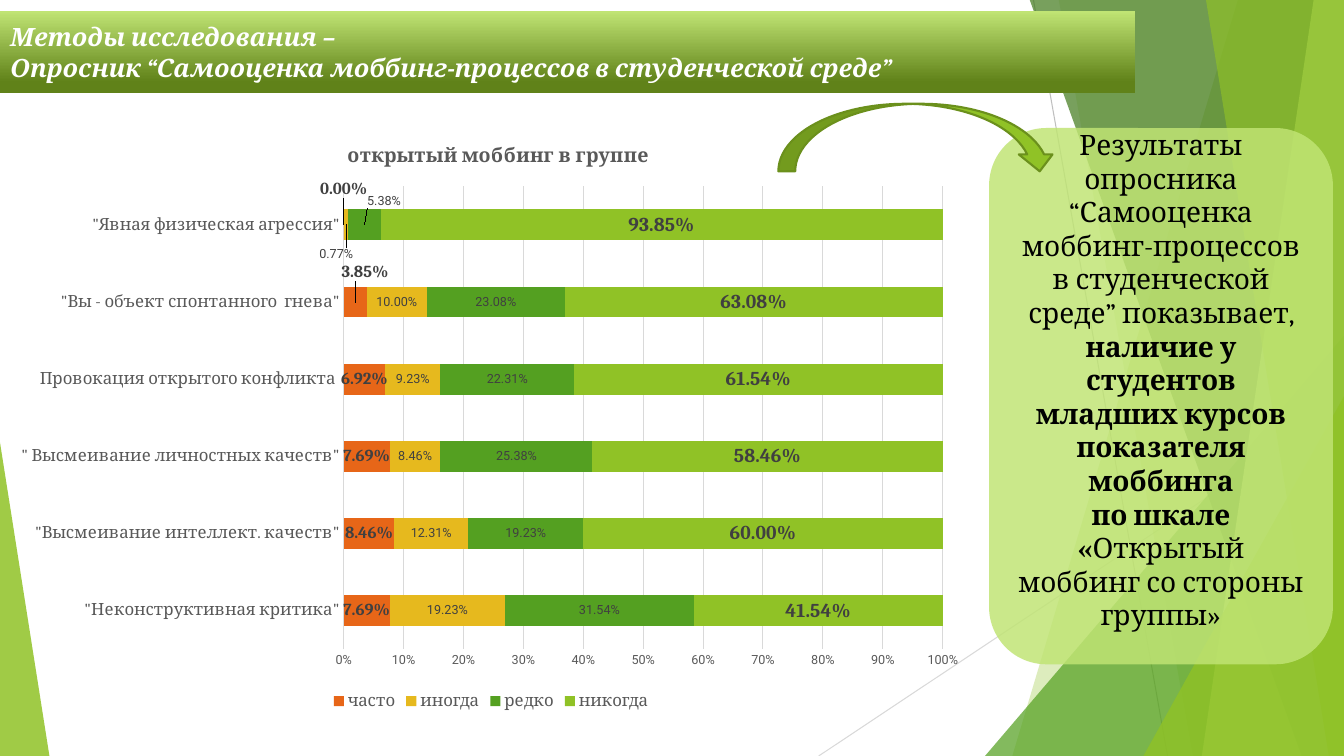
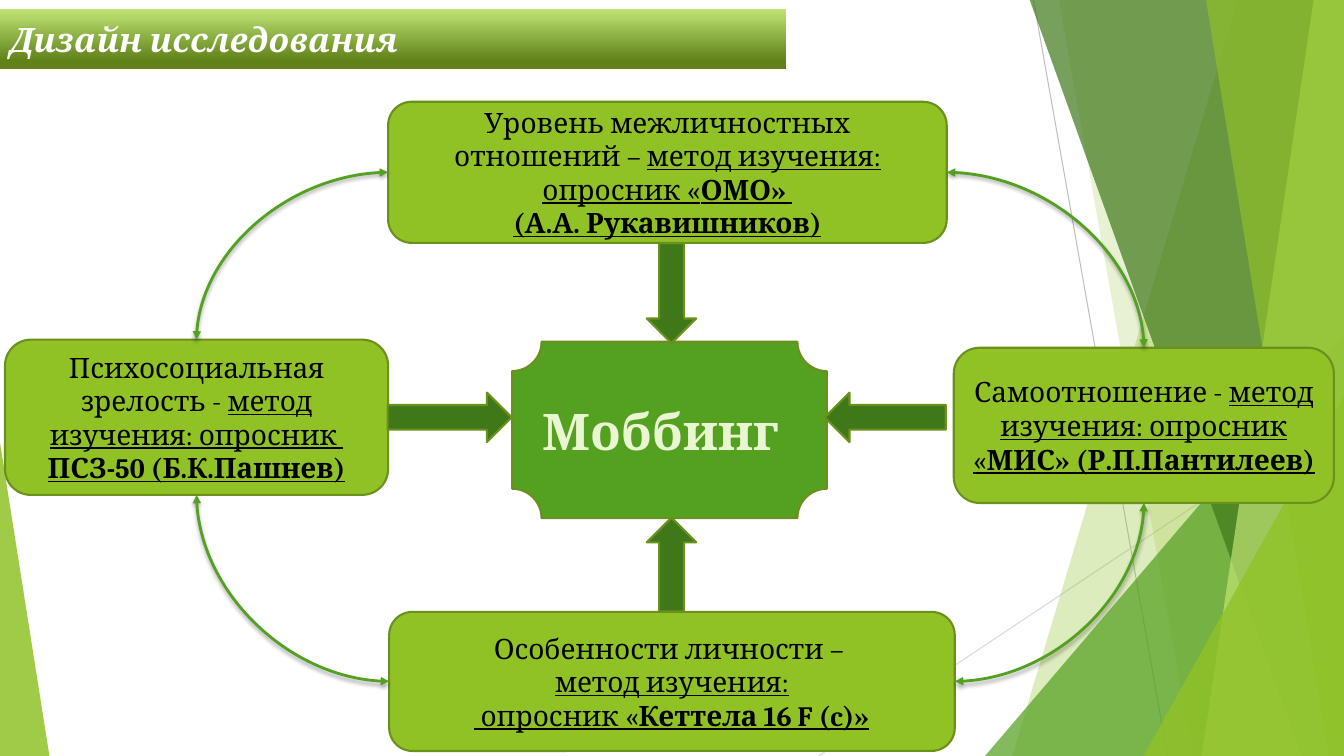
from lxml import etree
from pptx import Presentation
from pptx.chart.data import CategoryChartData
from pptx.dml.color import RGBColor
from pptx.enum.chart import XL_CHART_TYPE, XL_LEGEND_POSITION, XL_TICK_MARK
from pptx.enum.shapes import MSO_CONNECTOR, MSO_SHAPE
from pptx.enum.text import MSO_ANCHOR, MSO_AUTO_SIZE, PP_ALIGN
from pptx.oxml import parse_xml
from pptx.oxml.ns import nsdecls, qn
from pptx.util import Inches, Pt

HEX = {
    "lime": "90C226", "green": "54A021", "forest": "3F7819", "pale": "C0E474",
    "olive": "608219", "edge": "6B901C", "mint": "EAF6D1", "white": "FFFFFF",
    "black": "000000", "text": "595959", "label": "404040", "grid": "D9D9D9",
    "ray": "BFBFBF", "orange": "E76618", "gold": "E6B91E",
}
SERIF, SANS = "Cambria", "Roboto"

# Shared backdrop: rays, then facets (points or a triangle box) with opacity
RAYS = [((10.25, 0), (11.58, 7.5), "ray"), ((13.33, 4.03), (8.12, 7.5), "grid")]
FACETS = [
    ("poly", (12.28, 13.33, 13.33, 10.04), "lime", 30),
    ("poly", (10.5, 13.33, 13.33, 11.83), "lime", 20),
    ("tri", (9.77, 3.33, 3.56, 4.17, 1), "green", 72),
    ("poly", (10.21, 13.33, 13.33, 12.91), "forest", 70),
    ("poly", (13.03, 13.33, 13.33, 11.92), "pale", 70),
    ("poly", (11.96, 13.33, 13.33, 13.18), "lime", 65),
    ("tri", (11.34, 3.93, 1.99, 3.57, 1), "lime", 80),
    ("tri", (0, 4.39, 0.49, 3.11, 0), "lime", 85),
]

# Slide 1: survey results
SURVEY = "Методы исследования – \nОпросник “Самооценка моббинг-процессов в студенческой среде”"
CATS = [
    '"Неконструктивная критика"', '"Высмеивание интеллект. качеств"',
    '" Высмеивание личностных качеств"', "Провокация открытого конфликта ",
    '"Вы - объект спонтанного  гнева"', '"Явная физическая агрессия"',
]
# name, values, colour, label font (size, bold, face), {point: label shift}
SERIES = [
    ("часто", (0.0769, 0.0846, 0.0769, 0.0692, 0.0385, 0), "orange",
     (12, True, SERIF), {4: (0.01, -0.05), 5: (0, -0.06)}),
    ("иногда", (0.1923, 0.1231, 0.0846, 0.0923, 0.1, 0.0077), "gold",
     (9, False, SANS), {5: (-0.01, 0.05)}),
    ("редко", (0.3154, 0.1923, 0.2538, 0.2231, 0.2308, 0.0538), "green",
     (9, False, SANS), {5: (0.02, -0.04)}),
    ("никогда", (0.4154, 0.6, 0.5846, 0.6154, 0.6308, 0.9385), "lime",
     (14, True, SERIF), {}),
]
# Paragraphs of runs: (text, style), b bold, u underlined
RESULT = [
    [("Результаты опросника “Самооценка моббинг-процессов в студенческой среде” показывает, ", ""),
     ("наличие у студентов младших курсов показателя моббинга", "b")],
    [("по шкале «", "b"), ("Открытый моббинг со стороны группы»", "")],
]

# Slide 2: study design
BOXES = {
    "left": ((0.05, 3.37, 3.8, 1.54), [
        [("Психосоциальная зрелость - ", ""), ("метод изучения: опросник \n", "u"),
         ("ПСЗ-50 (Б.К.Пашнев)", "bu")]]),
    "right": ((9.46, 3.45, 3.77, 1.54), [
        [("Самоотношение - ", ""), ("метод изучения: опросник «", "u"),
         ("МИС» (Р.П.Пантилеев)", "bu")]]),
    "top": ((3.85, 1.01, 5.54, 1.4), [
        [("Уровень межличностных отношений – ", ""),
         ("метод изучения: опросник «", "u"), ("ОМО» ", "bu")],
        [("(А.А. Рукавишников)", "bu")]]),
    "bottom": ((3.86, 6.07, 5.61, 1.38), [
        [("Особенности личности – \n", ""), ("метод изучения:\n опросник «", "u"),
         ("Кеттела 16 F (c)»", "bu")]]),
}
# Curves: start box and side, end box and side
CURVES = [("top", 1, "left", 0), ("bottom", 3, "right", 2),
          ("top", 3, "right", 0), ("bottom", 1, "left", 2)]
# Block arrows: centre x, centre y, length, turn
ARROWS = [(6.66, 2.91, 0.99, 0), (4.46, 4.14, 1.23, 270),
          (6.66, 5.6, 0.93, 180), (8.78, 4.14, 1.2, 90)]
WIDE = 0.49


def rgb(name):
    return RGBColor.from_string(HEX[name])


def style(font, size, color, bold=None, face=SERIF):
    font.size, font.name, font.bold = Pt(size), face, bold
    font.color.rgb = rgb(color)


def add_box(slide, kind, at, fill, edge=None, alpha=None):
    box = slide.shapes.add_shape(kind, *map(Inches, at))
    paint(box, fill, edge, alpha)
    return box


def paint(box, fill, edge=None, alpha=None):
    box.shadow.inherit = False
    box.fill.solid()
    box.fill.fore_color.rgb = rgb(fill)
    if alpha:
        tint = box.element.spPr.find(".//" + qn("a:srgbClr"))
        etree.SubElement(tint, qn("a:alpha"), val=str(alpha * 1000))
    if edge:
        box.line.color.rgb = rgb(edge)
        box.line.width = Pt(1.5)
    else:
        box.line.fill.background()


def write(frame, paras, size, color, align, bold=None):
    for i, runs in enumerate(paras):
        para = frame.add_paragraph() if i else frame.paragraphs[0]
        para.alignment = align
        style(para.font, size, color, bold)
        for text, marks in runs:
            for j, part in enumerate(text.split("\n")):
                if j:
                    para.add_line_break()
                if part:
                    run = para.add_run()
                    run.text = part
                    if "b" in marks:
                        run.font.bold = True
                    if "u" in marks:
                        run.font.underline = True


def effects(line, inner=""):
    line.element.spPr.append(parse_xml(
        f'<a:effectLst {nsdecls("a")}>{inner}</a:effectLst>'))


def add_back(slide, layout):
    """Build the backdrop and hand it to the layout."""
    for item in list(layout.placeholders)[1:]:
        item.element.getparent().remove(item.element)
    parts = []
    for start, end, color in RAYS:
        ray = slide.shapes.add_connector(
            MSO_CONNECTOR.STRAIGHT, *map(Inches, start + end))
        ray.line.color.rgb = rgb(color)
        ray.line.width = Pt(0.75)
        effects(ray)
        parts.append(ray)
    for kind, data, color, alpha in FACETS:
        if kind == "tri":
            facet = add_box(slide, MSO_SHAPE.ISOSCELES_TRIANGLE, data[:4], color, alpha=alpha)
            facet.adjustments[0] = data[4]
        else:
            dots = [(Inches(x), Inches(y)) for x, y in zip(data, (-0.01, -0.01, 7.5, 7.5))]
            pen = slide.shapes.build_freeform(*dots[0])
            pen.add_line_segments(dots[1:], close=True)
            facet = pen.convert_to_shape()
            paint(facet, color, alpha=alpha)
        parts.append(facet)
    for part in parts:
        layout.shapes.element.append(part.element)


def set_title(slide, text, at, size):
    band = slide.shapes.title
    band.left, band.top, band.width, band.height = map(Inches, at)
    band.element.spPr.append(parse_xml(
        f'<a:prstGeom {nsdecls("a")} prst="flowChartDelay"><a:avLst/></a:prstGeom>'))
    band.fill.gradient()
    band.fill.gradient_angle = 90
    for stop, color, pos in zip(band.fill.gradient_stops, ("olive", "pale"), (0.13, 1)):
        stop.color.rgb = rgb(color)
        stop.position = pos
    frame = band.text_frame
    frame.word_wrap = True
    frame.auto_size = MSO_AUTO_SIZE.NONE
    frame.vertical_anchor = MSO_ANCHOR.MIDDLE
    write(frame, [[(text, "")]], size, "white", PP_ALIGN.LEFT, True)
    frame.paragraphs[0].font.italic = True


def place(node, index, head="", **spots):
    """Give a chart part a manual layout."""
    for old in node.findall(qn("c:layout")):
        node.remove(old)
    body = "".join(f'<c:{key} val="{val}"/>' for key, val in spots.items())
    node.insert(index, parse_xml(
        f'<c:layout {nsdecls("c")}><c:manualLayout>{head}{body}</c:manualLayout></c:layout>'))


def add_bars(slide):
    data = CategoryChartData(number_format="0.00%")
    data.categories = CATS
    for name, vals, *_ in SERIES:
        data.add_series(name, vals)
    chart = slide.shapes.add_chart(
        XL_CHART_TYPE.BAR_STACKED_100, *map(Inches, (0, 1.2, 9.74, 5.89)), data).chart
    style(chart.font, 10, "black", face=SANS)
    edge = '<c:xMode val="edge"/><c:yMode val="edge"/>'

    # Title and legend
    chart.has_title = True
    para = chart.chart_title.text_frame.paragraphs[0]
    para.text = "открытый моббинг в группе"
    style(para.font, 14, "text", True)
    place(chart.element.find(".//" + qn("c:title")), 1, edge, x=0.35, y=0.03)
    chart.has_legend = True
    chart.legend.position = XL_LEGEND_POSITION.BOTTOM
    chart.legend.include_in_layout = False
    style(chart.legend.font, 12, "text")

    # Axes
    cat, val = chart.category_axis, chart.value_axis
    for axis, size, face in ((cat, 12, SERIF), (val, 9, SANS)):
        axis.major_tick_mark = axis.minor_tick_mark = XL_TICK_MARK.NONE
        style(axis.tick_labels.font, size, "text", face=face)
    cat.has_major_gridlines = False
    val.has_major_gridlines = True
    for line in (cat.format.line, val.major_gridlines.format.line):
        line.color.rgb = rgb("grid")
        line.width = Pt(0.75)
    val.format.line.fill.background()
    val.tick_labels.number_format = "0%"
    val.tick_labels.number_format_is_linked = False

    # Bars and labels
    plot = chart.plots[0]
    plot.gap_width, plot.overlap, plot.vary_by_categories = 150, 100, False
    shifts = []
    for bar, (_, _, color, (size, bold, face), moves) in zip(plot.series, SERIES):
        bar.format.fill.solid()
        bar.format.fill.fore_color.rgb = rgb(color)
        tags = bar.data_labels
        tags.show_value = True
        tags.number_format, tags.number_format_is_linked = "0.00%", False
        style(tags.font, size, "label", bold, face)
        for point, shift in moves.items():
            style(bar.points[point].data_label.font, size, "label", bold, face)
            shifts.append(shift)
    for tag, (x, y) in zip(chart.element.iter(qn("c:dLbl")), shifts):
        place(tag, 1, x=x, y=y)
    place(chart.element.find(".//" + qn("c:plotArea")), 0,
          '<c:layoutTarget val="inner"/>' + edge, x=0.35, y=0.11, w=0.61, h=0.78)


def add_survey(slide):
    set_title(slide, SURVEY, (0, 0.11, 11.26, 0.81), 18)
    add_bars(slide)
    note = add_box(slide, MSO_SHAPE.ROUNDED_RECTANGLE, (9.81, 1.27, 3.41, 5.32), "pale", alpha=84)
    note.text_frame.margin_bottom = Inches(0.38)
    write(note.text_frame, RESULT, 20, "black", PP_ALIGN.CENTER)
    add_box(slide, MSO_SHAPE.CURVED_DOWN_ARROW, (7.72, 1.03, 2.76, 0.67), "lime", "edge")


def add_design(slide):
    set_title(slide, "Дизайн исследования", (0, 0.09, 7.8, 0.59), 24)
    core = add_box(slide, MSO_SHAPE.PLAQUE, (5.08, 3.39, 3.12, 1.75), "green", "edge")
    write(core.text_frame, [[("Моббинг", "")]], 36, "mint", PP_ALIGN.LEFT, True)
    boxes = {}
    for key, (at, paras) in BOXES.items():
        boxes[key] = add_box(slide, MSO_SHAPE.ROUNDED_RECTANGLE, at, "lime", "edge")
        write(boxes[key].text_frame, paras, 20, "black", PP_ALIGN.CENTER)
    for x, y, size, turn in ARROWS:
        arrow = add_box(slide, MSO_SHAPE.DOWN_ARROW,
                        (x - WIDE / 2, y - size / 2, WIDE, size), "forest", "edge")
        arrow.rotation = turn
    for start, out, end, into in CURVES:
        curve = slide.shapes.add_connector(MSO_CONNECTOR.CURVE, 0, 0, 0, 0)
        curve.begin_connect(boxes[start], out)
        curve.end_connect(boxes[end], into)
        curve.element.spPr.find(qn("a:prstGeom")).set("prst", "curvedConnector2")
        curve.line.color.rgb = rgb("green")
        curve.line.width = Pt(2)
        stroke = curve.element.spPr.find(qn("a:ln"))
        for tip in ("a:headEnd", "a:tailEnd"):
            etree.SubElement(stroke, qn(tip), type="triangle")
        effects(curve, f'<a:outerShdw blurRad="{Pt(3)}" dist="{Pt(2)}" dir="5400000">'
                       f'<a:srgbClr val="{HEX["black"]}"><a:alpha val="35000"/>'
                       '</a:srgbClr></a:outerShdw>')


def main():
    prs = Presentation()
    prs.slide_width, prs.slide_height = Inches(13.33), Inches(7.5)
    layout = prs.slide_layouts[5]
    first = prs.slides.add_slide(layout)
    add_back(first, layout)
    add_survey(first)
    add_design(prs.slides.add_slide(layout))
    prs.save("out.pptx")


if __name__ == "__main__":
    main()
